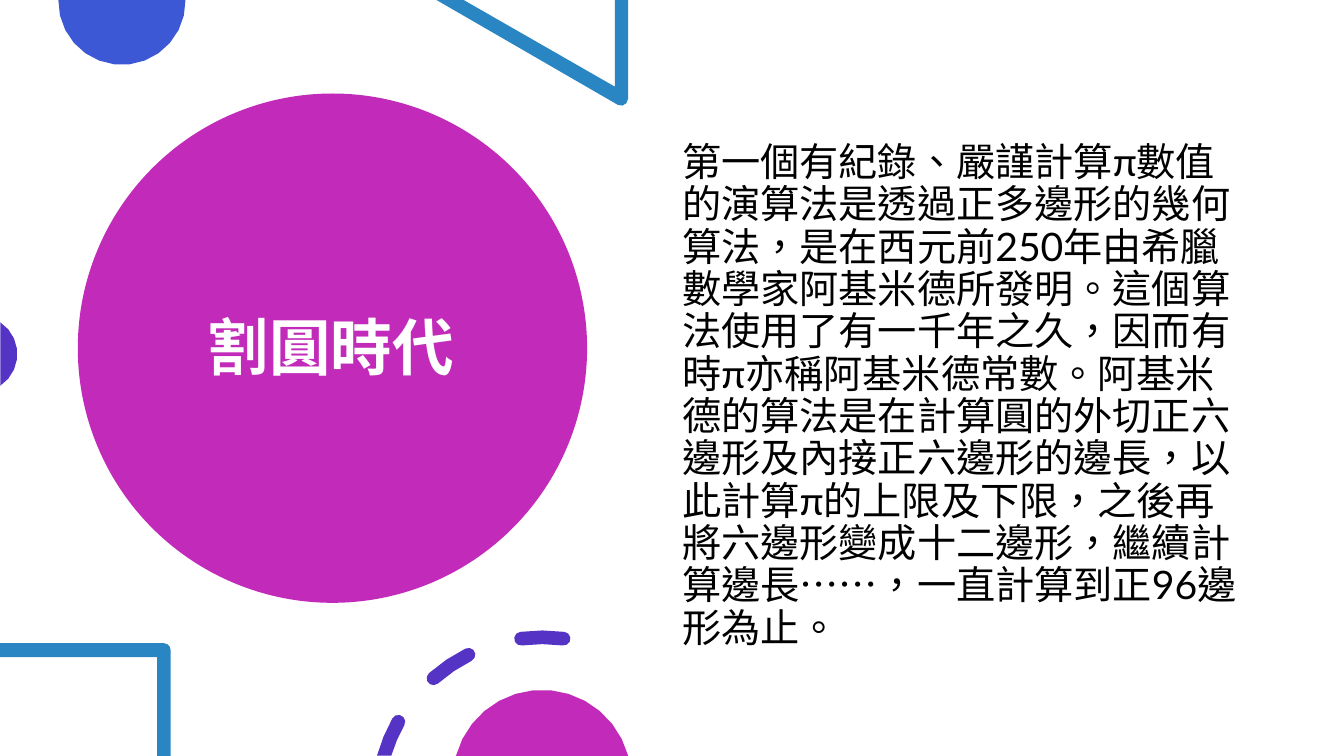
"""Build the slide on the polygon era of computing π."""
from dataclasses import dataclass
from math import acos, ceil, cos, degrees, radians, sin

from pptx import Presentation
from pptx import util as u
from pptx.dml.color import RGBColor
from pptx.enum import lang, shapes, text

Point = tuple[float, float]
Outline = list[Point]

BLUE, TEAL, PURPLE, MAGENTA = "3C58D4", "2A86C2", "5433C5", "C22AB9"
RING_CENTER, RING_RADIUS, HALF_DASH = (387.4, 573), 117.8, 4.9
ARC_TOLERANCE = 0.35
BODY = (
    "第一個有紀錄、嚴謹計算π數值的演算法是透過正多邊形的幾何算法，是在西元前250年由希臘數學家阿基米德所發明。"
    "這個算法使用了有一千年之久，因而有時π亦稱阿基米德常數。"
    "阿基米德的算法是在計算圓的外切正六邊形及內接正六邊形的邊長，以此計算π的上限及下限，"
    "之後再將六邊形變成十二邊形，繼續計算邊長……，一直計算到正96邊形為止。"
)


@dataclass
class Ornament:
    color: str
    outlines: list[Outline]


@dataclass
class TextStyle:
    font: str
    size: float
    color: str
    bold: bool = False


def rgb(value: str) -> RGBColor:
    return RGBColor.from_string(value)


def on_circle(center: Point, radius: float, angle: float) -> Point:
    a = radians(angle)
    return center[0] + radius * cos(a), center[1] + radius * sin(a)


def arc(center: Point, radius: float, start: float, end: float) -> Outline:
    widest_step = 2 * degrees(acos(1 - ARC_TOLERANCE / radius))
    steps = ceil(abs(end - start) / widest_step)
    return [on_circle(center, radius, start + (end - start) * i / steps)
            for i in range(steps + 1)]


def dash(outer_start: float, inner_start: float, end: float, capped: bool = True) -> Outline:
    def cap(angle: float, turn: float) -> Outline:
        middle = on_circle(RING_CENTER, RING_RADIUS, angle)
        return arc(middle, HALF_DASH, angle + turn, angle + turn + 180)[1:-1]

    points = arc(RING_CENTER, RING_RADIUS + HALF_DASH, outer_start, end)
    points += cap(end, 0)
    points += arc(RING_CENTER, RING_RADIUS - HALF_DASH, end, inner_start)
    return points + cap(outer_start, 180) if capped else points


def paint(sp, color: str) -> None:
    sp.fill.solid()
    sp.fill.fore_color.rgb = rgb(color)
    sp.line.fill.background()
    sp.shadow.inherit = False


def draw_ornament(s, ornament: Ornament) -> None:
    contours = [[(u.Pt(x), u.Pt(y)) for x, y in o] for o in ornament.outlines]
    builder = s.shapes.build_freeform(*contours[0][0], scale=1.0)
    builder.add_line_segments(contours[0][1:], close=True)
    for contour in contours[1:]:
        builder.move_to(*contour[0])
        builder.add_line_segments(contour[1:], close=True)
    paint(builder.convert_to_shape(), ornament.color)


def write(tf, content: str, style: TextStyle, anchor, space_before: float = 0) -> None:
    tf.word_wrap = True
    tf.auto_size = text.MSO_AUTO_SIZE.NONE
    tf.vertical_anchor = anchor
    p = tf.paragraphs[0]
    p.alignment = text.PP_ALIGN.LEFT
    p.line_spacing = 0.9
    p.space_before = u.Pt(space_before)
    r = p.add_run()
    r.text = content
    r.font.name = style.font
    r.font.size = u.Pt(style.size)
    r.font.bold = style.bold
    r.font.color.rgb = rgb(style.color)
    r.font.language_id = lang.MSO_LANGUAGE_ID.TRADITIONAL_CHINESE


ORNAMENTS = [
    Ornament(BLUE, [arc((87.1, 0.9), 45.4, -1, 181)]),
    Ornament(TEAL, [
        [(448.6, 0), (439.2, 0), (439.2, 61.9), (331.2, 0), (311.8, 0)]
        + arc((443.7, 70.6), 4.9, 120, 0)
    ]),
    Ornament(PURPLE, [arc((-14.8, 252.9), 27.2, -56.5, 56.5)]),
    Ornament(TEAL, [
        [(0, 459.4), (0, 469.4), (112.3, 469.4), (112.3, 540), (121.9, 540)]
        + arc((117, 464.3), 4.9, 0, -90)
    ]),
    Ornament(PURPLE, [
        dash(195.7, 197.1, 209.2, capped=False),
        dash(228.7, 228.7, 243.4),
        dash(262.6, 262.6, 277.4),
    ]),
    Ornament(MAGENTA, [arc((387.2, 556.5), 63.7, 195.1, 344.9)]),
]


def main() -> None:
    prs = Presentation()
    prs.slide_width, prs.slide_height = u.Pt(960), u.Pt(540)
    s = prs.slides.add_slide(prs.slide_layouts[5])

    disc = s.shapes.add_shape(
        shapes.MSO_SHAPE.OVAL, u.Pt(55.6), u.Pt(66.8), u.Pt(363.8), u.Pt(363.8)
    )
    paint(disc, MAGENTA)

    title = s.shapes.title
    title.element.getparent().append(title.element)
    title.left, title.top = u.Pt(141.1), u.Pt(113.8)
    title.width, title.height = u.Pt(254.9), u.Pt(320.4)
    title.text_frame.margin_bottom = u.Pt(51)
    write(title.text_frame, "割圓時代", TextStyle("Calibri", 44, "FFFFFF", True),
          text.MSO_ANCHOR.MIDDLE)

    for ornament in ORNAMENTS:
        draw_ornament(s, ornament)

    body = s.shapes.add_textbox(u.Pt(480.2), u.Pt(98.3), u.Pt(414), u.Pt(376.6))
    write(body.text_frame, BODY, TextStyle("Lato", 28, "000000"),
          text.MSO_ANCHOR.TOP, space_before=10)

    prs.save("out.pptx")


if __name__ == "__main__":
    main()
